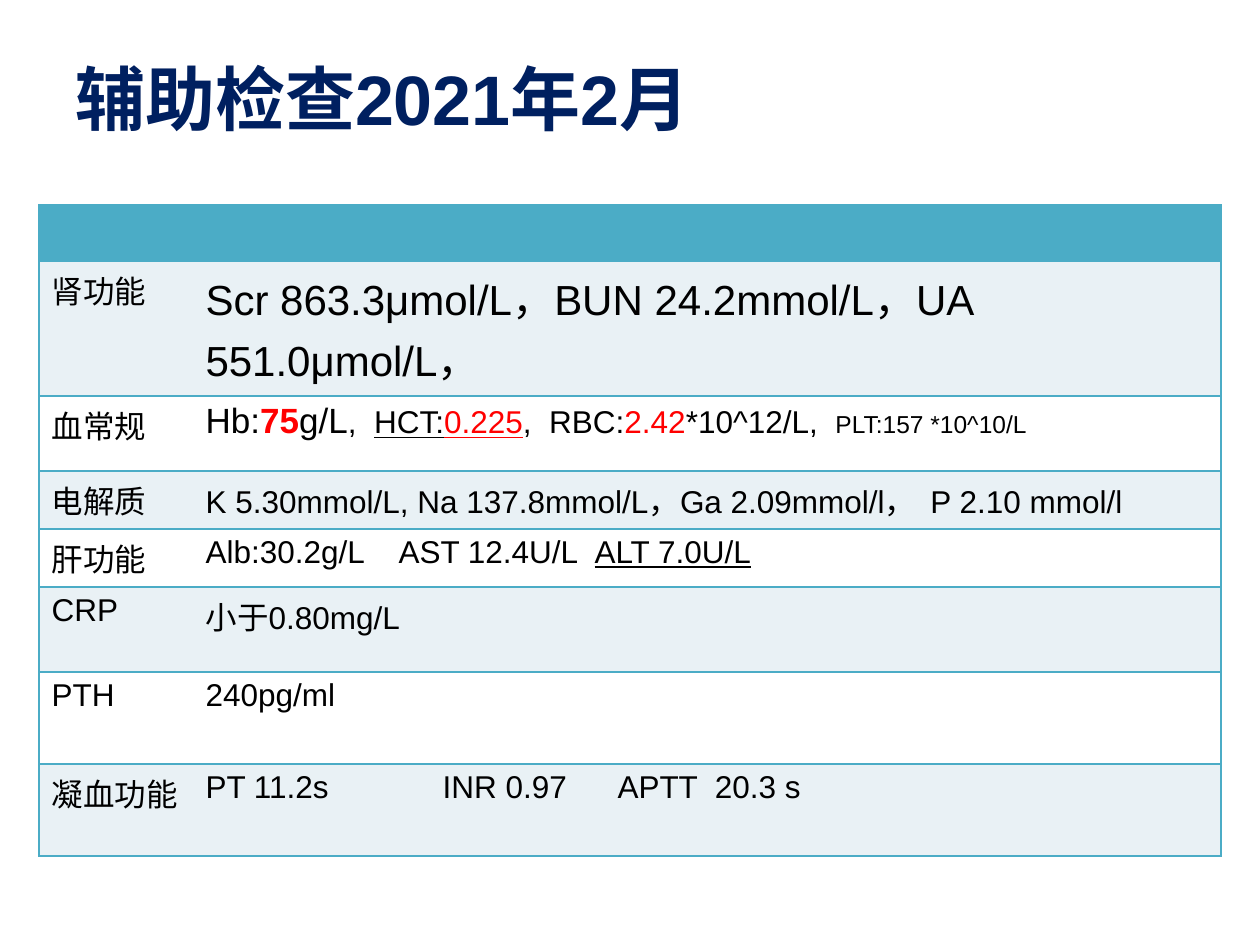
from lxml import etree
from pptx import Presentation
from pptx.dml.color import RGBColor
from pptx.enum.text import MSO_ANCHOR
from pptx.oxml.ns import qn
from pptx.util import Pt

PX = 914400 // 126
MIDDLE = MSO_ANCHOR.MIDDLE
TEAL, PALE, WHITE = "4BACC6", "E9F1F5", "FFFFFF"
NAVY, BLACK, RED = "002060", "000000", "FF0000"


def rgb(value):
    return RGBColor.from_string(value)


def set_borders(cell, shown):
    """Teal 1 pt lines on the shown sides, none on the others."""
    props = cell._tc.get_or_add_tcPr()
    for index, side in enumerate("LRTB"):
        line = etree.Element(qn(f"a:ln{side}"), w="12700")
        if side in shown:
            solid = etree.SubElement(line, qn("a:solidFill"))
            etree.SubElement(solid, qn("a:srgbClr"), val=TEAL)
        else:
            etree.SubElement(line, qn("a:noFill"))
        props.insert(index, line)


prs = Presentation()
prs.slide_width, prs.slide_height = 1260 * PX, 945 * PX
slide = prs.slides.add_slide(prs.slide_layouts[6])

# Title
title = slide.shapes.add_textbox(63 * PX, 59 * PX, 1134 * PX, 77 * PX).text_frame
title.word_wrap = True
title.vertical_anchor = MIDDLE
heading = title.paragraphs[0]
heading.text = "辅助检查2021年2月"
heading.font.name = "Arial"
heading.font.size = Pt(40)
heading.font.bold = True
heading.font.color.rgb = rgb(NAVY)

# Examination results: row height, item, runs (text, own formatting), tab stops
results = [
    (56, "", [], []),
    (135, "肾功能",
     [("Scr 863.3μmol/L，BUN 24.2mmol/L，UA 551.0μmol/L，", {"size": 24})], []),
    (75, "血常规",
     [("Hb:", {"size": 20}),
      ("75", {"size": 20, "color": RED, "bold": True}),
      ("g/L", {"size": 20}),
      (",  ", {}),
      ("HCT:", {"underline": True}),
      ("0.225", {"color": RED, "underline": True}),
      (",  RBC:", {}),
      ("2.42", {"color": RED}),
      ("*10^12/L,  ", {}),
      ("PLT:157 *10^10/L", {"size": 14})], []),
    (58, "电解质",
     [("K 5.30mmol/L, Na 137.8mmol/L，Ga 2.09mmol/l，  P 2.10 mmol/l", {})], []),
    (58, "肝功能",
     [("Alb:30.2g/L\tAST 12.4U/L\t", {}), ("ALT 7.0U/L", {"underline": True})],
     [193, 389]),
    (85, "CRP", [("小于0.80mg/L", {})], []),
    (92, "PTH", [("240pg/ml", {})], []),
    (92, "凝血功能", [("PT 11.2s\tINR 0.97\tAPTT  20.3 s", {})], [237, 412]),
]

table_height = sum(row[0] for row in results)
table = slide.shapes.add_table(
    len(results), 2, 39 * PX, 205 * PX, 1182 * PX, table_height * PX).table
table.columns[0].width = 154 * PX
table.columns[1].width = 1028 * PX

for number, (height, item, values, stops) in enumerate(results):
    table.rows[number].height = height * PX
    fill = TEAL if number == 0 else PALE if number % 2 else WHITE
    contents = [([(item, {})] if item else [], []), (values, stops)]
    for column, (runs, tabs) in enumerate(contents):
        cell = table.cell(number, column)
        cell.fill.solid()
        cell.fill.fore_color.rgb = rgb(fill)
        set_borders(cell, "RTB" if column else "LTB")
        paragraph = cell.text_frame.paragraphs[0]
        if tabs:
            tab_list = etree.SubElement(
                paragraph._p.get_or_add_pPr(), qn("a:tabLst"))
            for stop in tabs:
                etree.SubElement(
                    tab_list, qn("a:tab"), pos=str(stop * PX), algn="l")
        paragraph.font.name = "Arial"
        paragraph.font.bold = False
        for text, style in runs:
            run = paragraph.add_run()
            run.text = text
            run.font.size = Pt(style.get("size", 18))
            run.font.bold = style.get("bold", False)
            run.font.underline = style.get("underline", False)
            run.font.color.rgb = rgb(style.get("color", BLACK))

prs.save("out.pptx")
